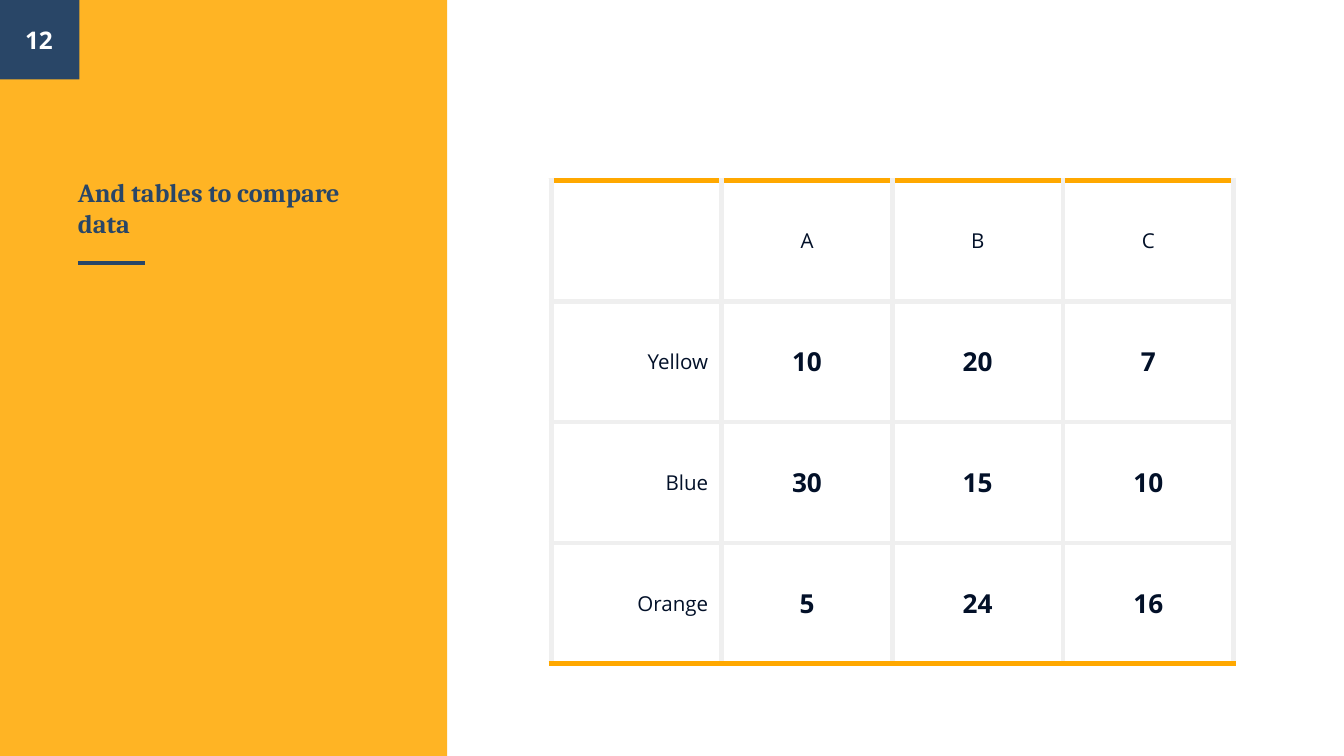
from lxml import etree
from pptx import Presentation
from pptx.dml.color import RGBColor
from pptx.enum.shapes import MSO_CONNECTOR, MSO_SHAPE
from pptx.enum.text import MSO_ANCHOR, MSO_AUTO_SIZE, PP_ALIGN
from pptx.oxml.ns import qn
from pptx.util import Inches, Pt

# Content
TITLE = "And tables to compare data"
PAGE_NUMBER = "12"
ROWS = [
    ("", "A", "B", "C"),
    ("Yellow", "10", "20", "7"),
    ("Blue", "30", "15", "10"),
    ("Orange", "5", "24", "16"),
]

COLORS = {
    "amber": "FFA800",
    "navy": "294667",
    "ink": "021028",
    "grid": "EFEFEF",
    "white": "FFFFFF",
}
HEADING_FONT, BODY_FONT = "Cambria", "Open Sans"
WIDTH = 10
HEIGHT = WIDTH * 9 / 16
PANEL_WIDTH = 3.33
TABLE_LEFT, TABLE_TOP, COLUMN_WIDTH, ROW_HEIGHT = 4.1, 1.34, 1.27, 0.9
BORDER_POINTS = 3


def add_block(slide, left, top, width, height, color, opacity=None):
    shape = slide.shapes.add_shape(
        MSO_SHAPE.RECTANGLE, Inches(left), Inches(top), Inches(width), Inches(height))
    shape.shadow.inherit = False
    shape.fill.solid()
    shape.fill.fore_color.rgb = RGBColor.from_string(COLORS[color])
    shape.line.fill.background()
    if opacity is not None:
        color_element = shape.element.spPr.find(qn("a:solidFill"))[0]
        etree.SubElement(color_element, qn("a:alpha"), val=str(opacity * 1000))


def write(text_frame, text, size, color, font=BODY_FONT, bold=False,
          align=PP_ALIGN.LEFT):
    text_frame.text = text
    paragraph = text_frame.paragraphs[0]
    paragraph.alignment = align
    for run in paragraph.runs:
        run.font.name = font
        run.font.size = Pt(size)
        run.font.bold = bold
        run.font.color.rgb = RGBColor.from_string(COLORS[color])


def set_frame(text_frame, anchor):
    text_frame.word_wrap = True
    text_frame.auto_size = MSO_AUTO_SIZE.NONE
    text_frame.vertical_anchor = anchor
    text_frame.margin_left = text_frame.margin_right = Inches(0.1)
    text_frame.margin_top = text_frame.margin_bottom = Inches(0.1)


def set_borders(cell, top, bottom):
    properties = cell._tc.get_or_add_tcPr()
    sides = (("lnL", "grid"), ("lnR", "grid"), ("lnT", top), ("lnB", bottom))
    for position, (side, color) in enumerate(sides):
        line = etree.Element(qn(f"a:{side}"), w=str(Pt(BORDER_POINTS)))
        fill = etree.SubElement(line, qn("a:solidFill"))
        etree.SubElement(fill, qn("a:srgbClr"), val=COLORS[color])
        properties.insert(position, line)


presentation = Presentation()
presentation.slide_width = Inches(WIDTH)
presentation.slide_height = Inches(HEIGHT)
slide = presentation.slides.add_slide(presentation.slide_layouts[5])
title = slide.shapes.title

# Side panel, content area and page number block
add_block(slide, 0, 0, PANEL_WIDTH, HEIGHT, "amber", opacity=86)
add_block(slide, PANEL_WIDTH, 0, WIDTH - PANEL_WIDTH, HEIGHT, "white")
add_block(slide, 0, 0, 0.59, 0.59, "navy")

# Rule below the title
rule = slide.shapes.add_connector(
    MSO_CONNECTOR.STRAIGHT, Inches(0.58), Inches(1.96), Inches(1.08), Inches(1.96))
rule.line.color.rgb = RGBColor.from_string(COLORS["navy"])
rule.line.width = Pt(2.25)
etree.SubElement(rule.element.spPr, qn("a:effectLst"))

# Title, brought in front of the panel
slide.shapes.element.append(title.element)
title.left, title.top = Inches(0.48), Inches(1.14)
title.width, title.height = Inches(2.35), Inches(0.74)
set_frame(title.text_frame, MSO_ANCHOR.BOTTOM)
write(title.text_frame, TITLE, 14, "navy", HEADING_FONT, bold=True)

# Comparison table
row_count, column_count = len(ROWS), len(ROWS[0])
table_frame = slide.shapes.add_table(
    row_count, column_count, Inches(TABLE_LEFT), Inches(TABLE_TOP),
    Inches(COLUMN_WIDTH * column_count), Inches(ROW_HEIGHT * row_count))
table = table_frame.table
table.first_row = table.horz_banding = False
for column in table.columns:
    column.width = Inches(COLUMN_WIDTH)
for row in table.rows:
    row.height = Inches(ROW_HEIGHT)

for row_index, values in enumerate(ROWS):
    for column_index, value in enumerate(values):
        cell = table.cell(row_index, column_index)
        is_header = row_index == 0
        is_label = column_index == 0
        is_number = not (is_header or is_label)
        cell.fill.background()
        cell.vertical_anchor = MSO_ANCHOR.MIDDLE
        cell.margin_left = cell.margin_right = Inches(0.1)
        cell.margin_top = cell.margin_bottom = Inches(0.07)
        write(cell.text_frame, value, 14 if is_number else 11, "ink", bold=is_number,
              align=PP_ALIGN.RIGHT if is_label else PP_ALIGN.CENTER)
        set_borders(cell, top="amber" if is_header else "grid",
                    bottom="amber" if row_index == row_count - 1 else "grid")

# Page number
number_box = slide.shapes.add_textbox(
    Inches(-0.01), Inches(0), Inches(0.6), Inches(0.59))
set_frame(number_box.text_frame, MSO_ANCHOR.MIDDLE)
write(number_box.text_frame, PAGE_NUMBER, 13, "white", bold=True,
      align=PP_ALIGN.CENTER)

presentation.save("out.pptx")
